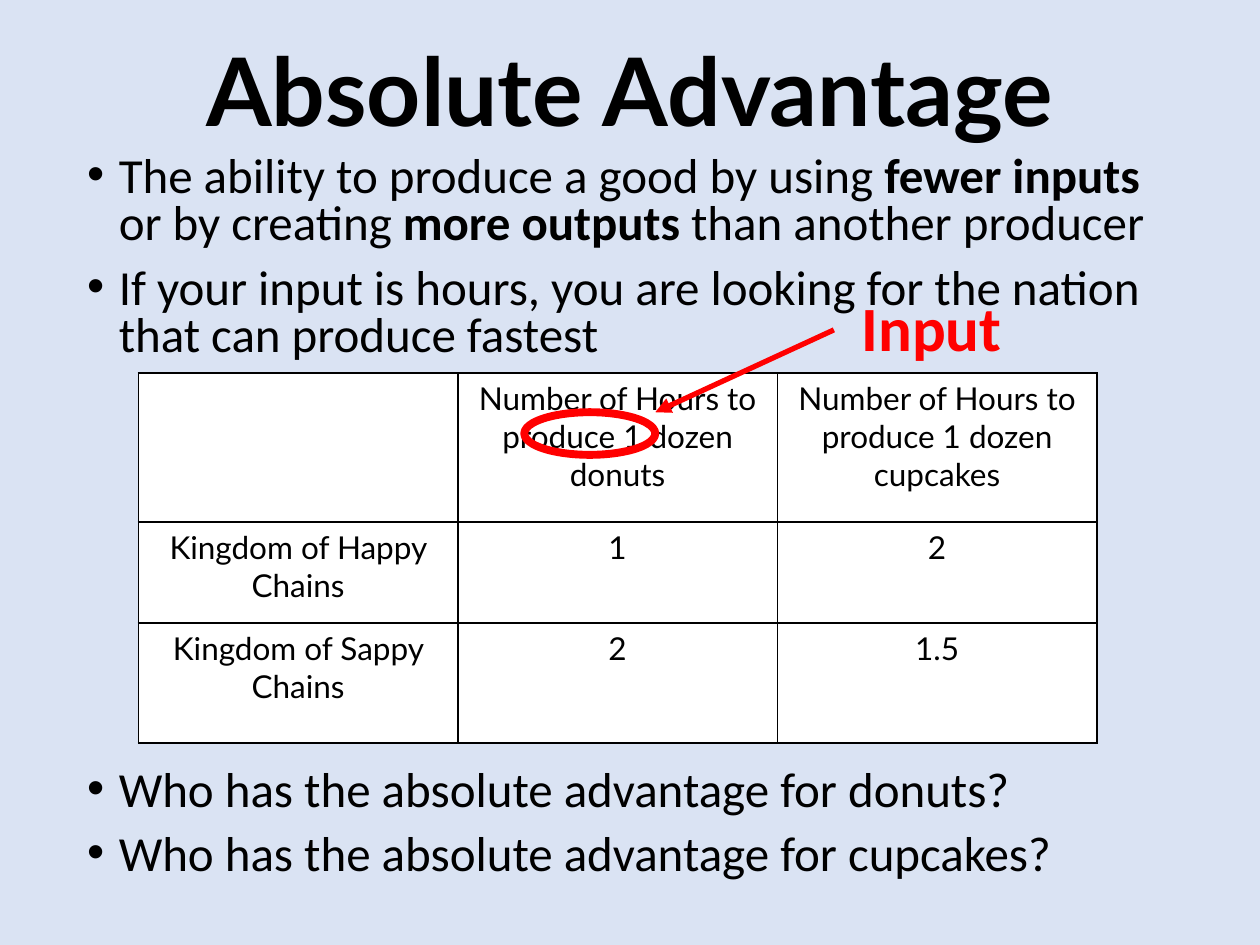
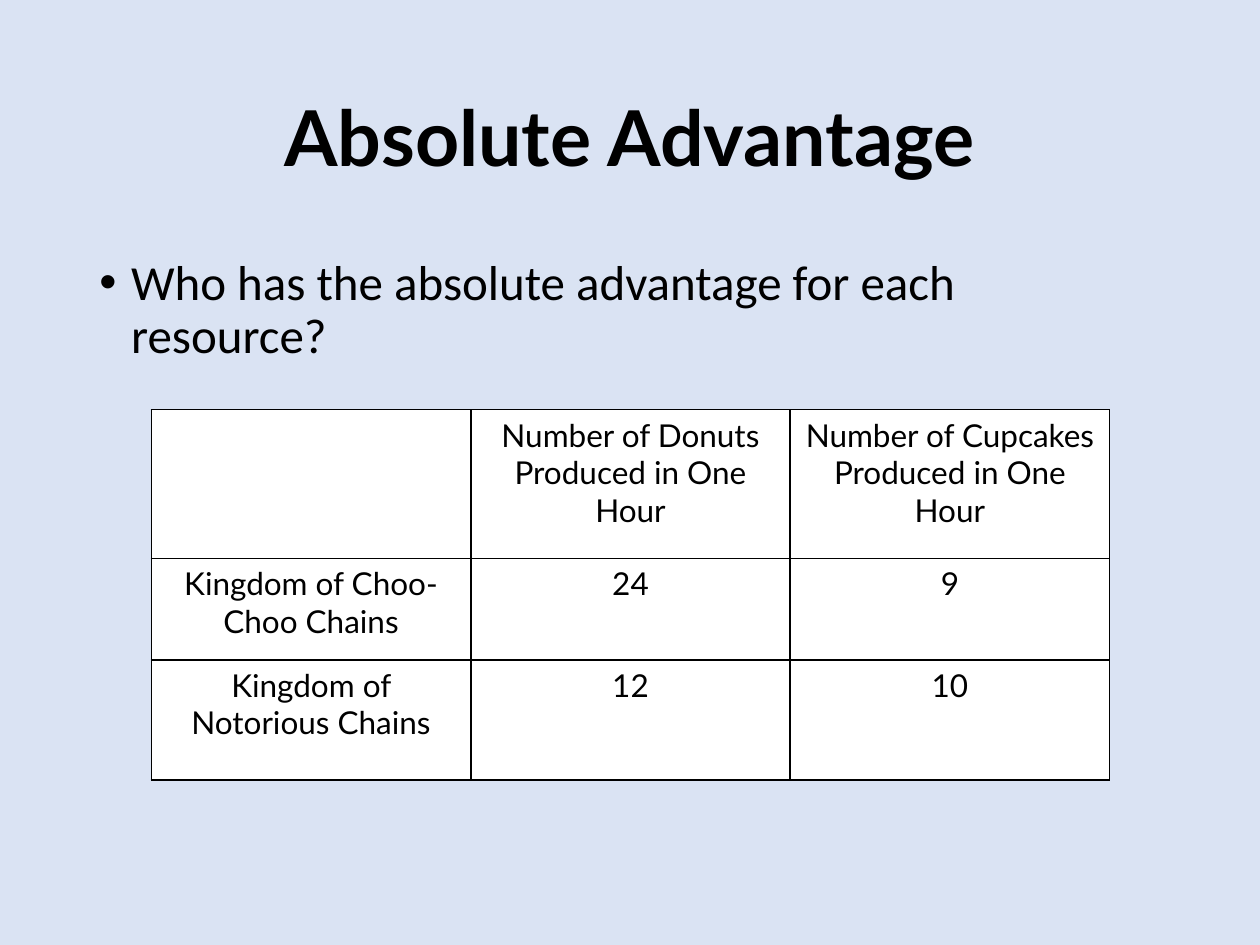
"""Build two slides that compare absolute advantage between kingdoms."""
from lxml import etree
from pptx import Presentation
from pptx.dml.color import RGBColor
from pptx.enum.shapes import MSO_CONNECTOR, MSO_SHAPE
from pptx.enum.text import MSO_ANCHOR, MSO_AUTO_SIZE, PP_ALIGN
from pptx.oxml.ns import qn
from pptx.util import Cm, Pt

CENTER, LEFT = PP_ALIGN.CENTER, PP_ALIGN.LEFT
MIDDLE, TOP = MSO_ANCHOR.MIDDLE, MSO_ANCHOR.TOP
NO_FIT = MSO_AUTO_SIZE.NONE
OVAL, STRAIGHT = MSO_SHAPE.OVAL, MSO_CONNECTOR.STRAIGHT

COLORS = {"back": "DAE3F3", "text": "000000", "cell": "FFFFFF", "mark": "FF0000"}
FONTS = {
    "title": {"name": "Lato", "bold": True},
    "body": {"name": "Calibri", "size": Pt(28)},
    "cell": {"name": "Lato", "size": Pt(18)},
    "label": {"name": "Calibri", "size": Pt(36), "bold": True},
}
COLUMN = Cm(6.44)
ROWS = (Cm(3), Cm(2.04), Cm(2.42))
INDENT = Cm(0.64)
GAP = Pt(10)
TABLE_GAP = Pt(233)


def tint(color):
    return RGBColor.from_string(COLORS[color])


def apply(target, values):
    for key, value in values.items():
        setattr(target, key, value)


def place(shape, left, top, width, height):
    box = {"left": left, "top": top, "width": width, "height": height}
    apply(shape, {key: Cm(value) for key, value in box.items()})


def write(par, text, font, color="text", **extra):
    run = par.add_run()
    run.text = text
    apply(run.font, {**FONTS[font], **extra})
    run.font.color.rgb = tint(color)


def add_title(slide, text, box, size):
    title = slide.shapes.title
    place(title, *box)
    apply(title.text_frame, {"vertical_anchor": MIDDLE, "auto_size": NO_FIT})
    par = title.text_frame.paragraphs[0]
    apply(par, {"alignment": CENTER, "line_spacing": 0.9})
    write(par, text, "title", size=Pt(size))


def add_list(slide, items, box, spacing):
    """Fill the body with (space before, runs) items; odd runs are bold."""
    body = slide.placeholders[1]
    place(body, *box)
    frame = body.text_frame
    apply(frame, {"vertical_anchor": TOP, "auto_size": NO_FIT})
    for index, (before, runs) in enumerate(items):
        par = frame.add_paragraph() if index else frame.paragraphs[0]
        apply(par, {"alignment": LEFT, "line_spacing": spacing,
                    "space_before": before, "space_after": Pt(0)})
        props = par._p.get_or_add_pPr()
        props.set("marL", str(INDENT))
        props.set("indent", str(-INDENT))
        for turn, text in enumerate(runs):
            write(par, text, "body", bold=turn % 2 == 1)


def add_border(cell):
    props = cell._tc.get_or_add_tcPr()
    for side in ("a:lnL", "a:lnR", "a:lnT", "a:lnB"):
        line = etree.SubElement(props, qn(side), w=str(Pt(1)))
        fill = etree.SubElement(line, qn("a:solidFill"))
        etree.SubElement(fill, qn("a:srgbClr"), val=COLORS["text"])


def add_grid(slide, data, left, top):
    count = len(data[0])
    table = slide.shapes.add_table(len(data), count, Cm(left), Cm(top),
                                   COLUMN * count, sum(ROWS)).table
    apply(table, {"first_row": False, "horz_banding": False})
    for row, height in zip(table.rows, ROWS):
        row.height = height
    for row, values in zip(table.rows, data):
        for cell, text in zip(row.cells, values):
            add_border(cell)
            cell.fill.solid()
            cell.fill.fore_color.rgb = tint("cell")
            par = cell.text_frame.paragraphs[0]
            par.alignment = CENTER
            if text:
                write(par, text, "cell")


def draw_line(shape, width):
    shape.line.color.rgb = tint("mark")
    shape.line.width = Pt(width)


def add_ring(slide, box):
    ring = slide.shapes.add_shape(OVAL, *map(Cm, box))
    ring.shadow.inherit = False
    ring.fill.background()
    draw_line(ring, 4.5)


def add_arrow(slide, start, end):
    arrow = slide.shapes.add_connector(STRAIGHT, *map(Cm, start + end))
    draw_line(arrow, 3)
    etree.SubElement(arrow.line._get_or_add_ln(), qn("a:tailEnd"), type="triangle")
    etree.SubElement(arrow._element.spPr, qn("a:effectLst"))


def add_label(slide, text, box):
    frame = slide.shapes.add_textbox(*map(Cm, box)).text_frame
    frame.word_wrap = True
    write(frame.paragraphs[0], text, "label", "mark")


def add_hours(deck):
    slide = deck.slides.add_slide(deck.slide_layouts[1])
    add_title(slide, "Absolute Advantage", (1.75, 0.1, 21.89, 3.68), 54)
    add_list(slide, [
        (GAP, ["The ability to produce a good by using ", "fewer inputs ",
               "or by creating ", "more outputs ", "than another producer"]),
        (GAP, ["If your input is hours, you are looking for the nation "
               "that can produce fastest"]),
        (TABLE_GAP, ["Who has the absolute advantage for donuts?"]),
        (GAP, ["Who has the absolute advantage for cupcakes?"]),
    ], (1.5, 3.02, 21.89, 14.96), 0.8)
    add_grid(slide, [
        ("", "Number of Hours to produce 1 dozen donuts",
         "Number of Hours to produce 1 dozen cupcakes"),
        ("Kingdom of Happy Chains", "1", "2"),
        ("Kingdom of Sappy Chains", "2", "1.5"),
    ], 2.79, 7.52)
    add_ring(slide, (10.57, 8.31, 2.64, 0.86))
    add_arrow(slide, (16.81, 6.65), (13.21, 8.31))
    add_label(slide, "Input", (17.12, 5.69, 4.67, 1.8))


def add_output(deck):
    slide = deck.slides.add_slide(deck.slide_layouts[1])
    add_title(slide, "Absolute Advantage", (1.75, 1.02, 21.89, 3.68), 44)
    add_list(slide, [
        (GAP, ["Who has the absolute advantage for each resource?"]),
    ], (1.75, 5.08, 21.89, 12.09), 0.9)
    add_grid(slide, [
        ("", "Number of Donuts Produced in One Hour",
         "Number of Cupcakes Produced in One Hour"),
        ("Kingdom of Choo-Choo Chains", "24", "9"),
        ("Kingdom of Notorious Chains", "12", "10"),
    ], 3.05, 8.26)


def main():
    deck = Presentation()
    apply(deck, {"slide_width": Cm(25.4), "slide_height": Cm(19.05)})
    back = deck.slide_master.background.fill
    back.solid()
    back.fore_color.rgb = tint("back")
    add_hours(deck)
    add_output(deck)
    deck.save("out.pptx")


if __name__ == "__main__":
    main()
